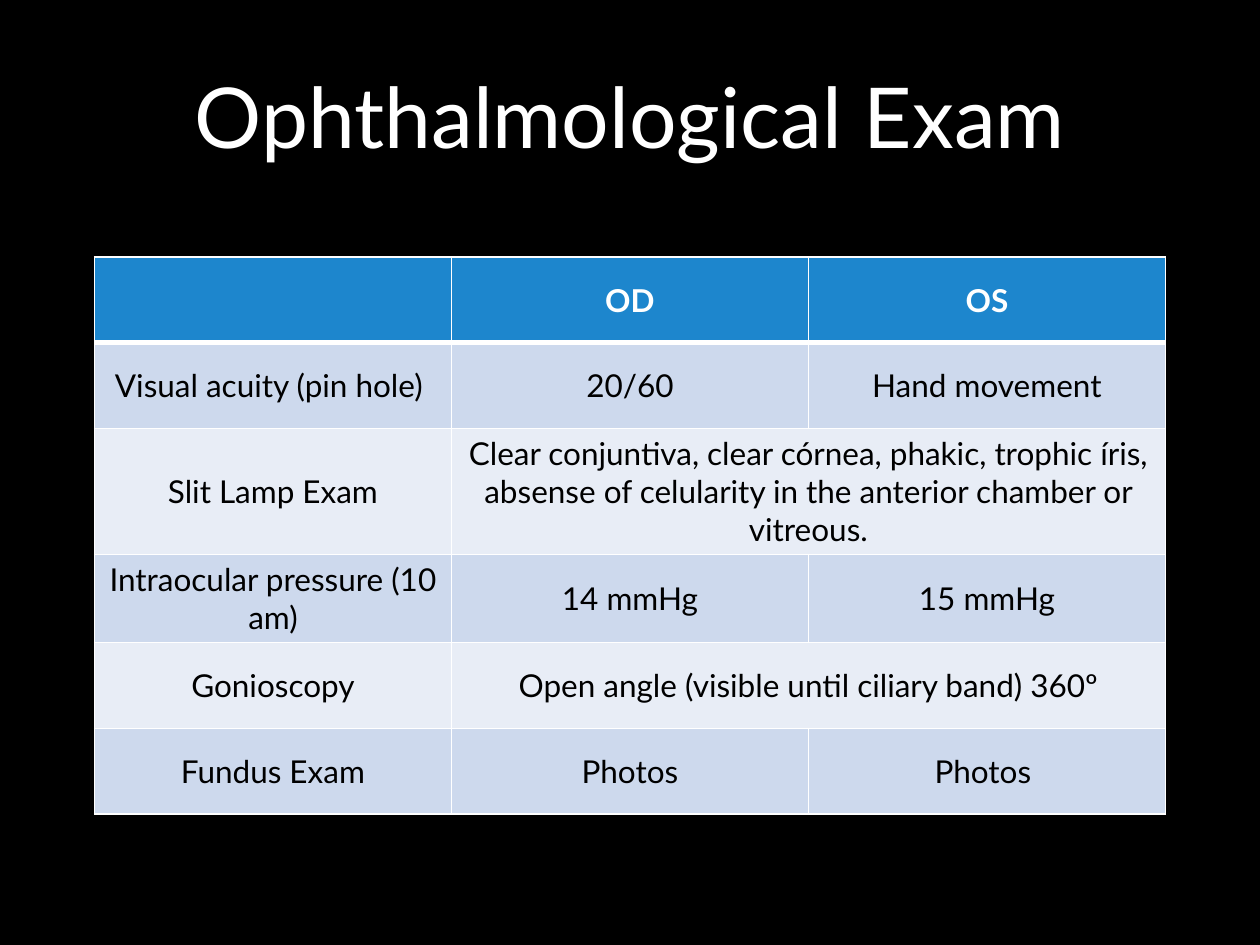
import pptx
import pptx.dml.color
import pptx.enum.text
import pptx.oxml
import pptx.oxml.ns
import pptx.util
from pptx.util import Inches


def color(hex_code):
    return pptx.dml.color.RGBColor.from_string(hex_code)


def write(frame, text, size=18, ink="000000", bold=False):
    paragraph = frame.paragraphs[0]
    paragraph.alignment = pptx.enum.text.PP_ALIGN.CENTER
    run = paragraph.add_run()
    run.text = text
    run.font.name = "Lato"
    run.font.size = pptx.util.Pt(size)
    run.font.bold = bold
    run.font.color.rgb = color(ink)


MIDDLE = pptx.enum.text.MSO_ANCHOR.MIDDLE
HEADER_FILL, ODD_FILL, EVEN_FILL = "1D86CD", "CDD9ED", "E8EDF6"
# A row with two entries spans both eyes with its finding.
findings = [
    ("", "OD", "OS"),
    ("Visual acuity (pin hole) ", "20/60", "Hand movement"),
    ("Slit Lamp Exam", "Clear conjuntiva, clear córnea, phakic, trophic íris, "
     "absense of celularity in the anterior chamber or vitreous."),
    ("Intraocular pressure (10 am)", "14 mmHg", "15 mmHg"),
    ("Gonioscopy", "Open angle (visible until ciliary band) 360º"),
    ("Fundus Exam", "Photos", "Photos "),
]

prs = pptx.Presentation()
prs.slide_width, prs.slide_height = Inches(10), Inches(7.5)
slide = prs.slides.add_slide(prs.slide_layouts[5])
slide.background.fill.solid()
slide.background.fill.fore_color.rgb = color("000000")

title = slide.shapes.title
title.left, title.top = Inches(0.75), Inches(0.13)
title.width, title.height = Inches(8.5), Inches(1.56)
title.text_frame.vertical_anchor = MIDDLE
write(title.text_frame, "Ophthalmological Exam", size=48, ink="FFFFFF")

exam = slide.shapes.add_table(
    len(findings), 3, Inches(0.75), Inches(2.04), Inches(8.5), Inches(0.68 * len(findings))
).table
for row, entries in enumerate(findings):
    header = row == 0
    fill = HEADER_FILL if header else ODD_FILL if row % 2 else EVEN_FILL
    for column in range(3):
        cell = exam.cell(row, column)
        cell.vertical_anchor = MIDDLE
        for side in "LRTB":
            thick = (header and side == "B") or (row == 1 and side == "T")
            width = pptx.util.Pt(3 if thick else 1)
            cell._tc.get_or_add_tcPr().append(pptx.oxml.parse_xml(
                f'<a:ln{side} {pptx.oxml.ns.nsdecls("a")} w="{width}"><a:solidFill>'
                f'<a:srgbClr val="FFFFFF"/></a:solidFill></a:ln{side}>'))
        cell.fill.solid()
        cell.fill.fore_color.rgb = color(fill)
        if column < len(entries) and entries[column]:
            write(cell.text_frame, entries[column],
                  ink="FFFFFF" if header else "000000", bold=header)
    if len(entries) == 2:
        exam.cell(row, 1).merge(exam.cell(row, 2))

prs.save("out.pptx")
